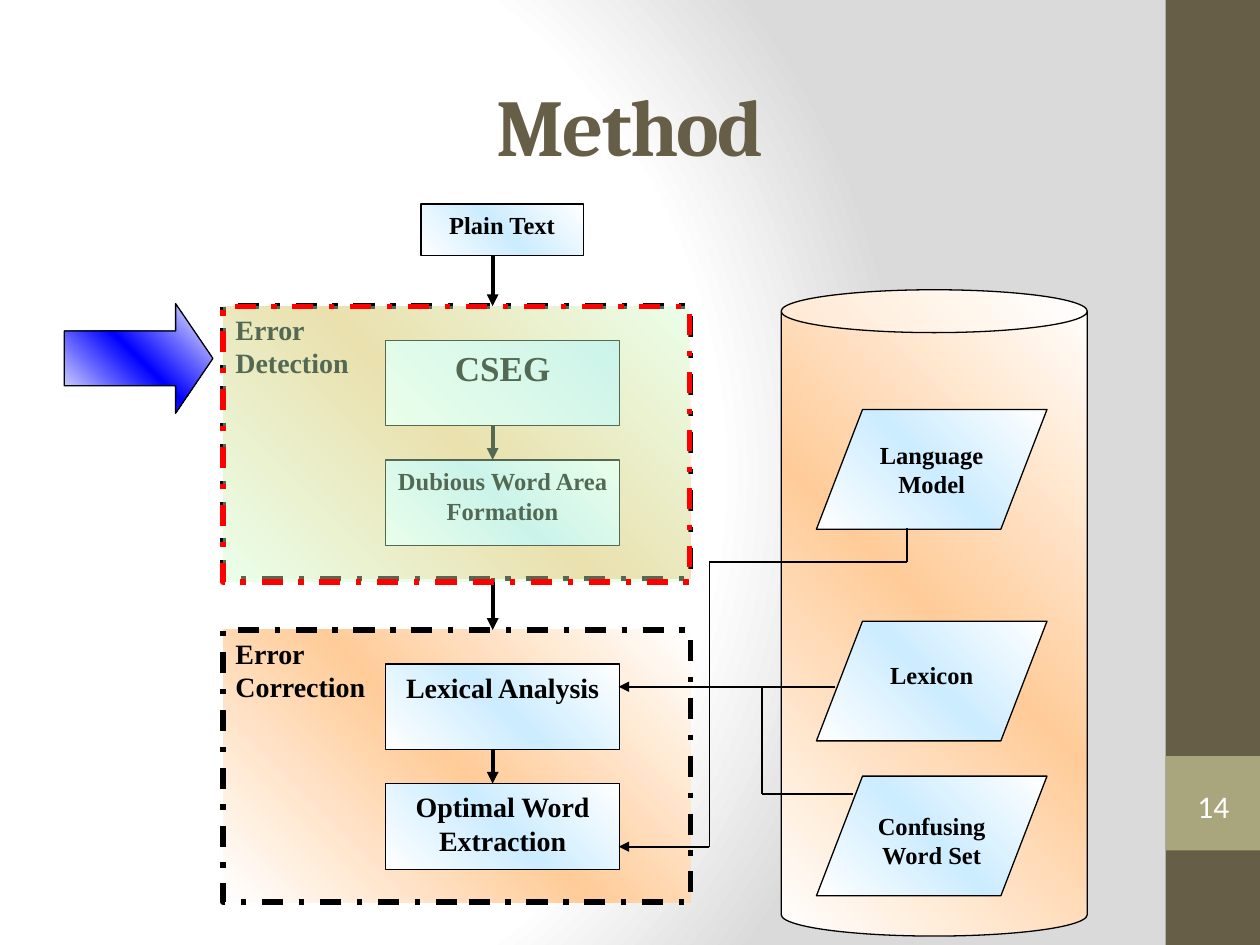
from dataclasses import dataclass
from itertools import pairwise
from lxml.etree import SubElement
from pptx import Presentation
from pptx.dml.color import RGBColor
from pptx.enum.dml import MSO_LINE
from pptx.enum.shapes import MSO_CONNECTOR, MSO_SHAPE
from pptx.enum.text import MSO_ANCHOR, PP_ALIGN
from pptx.oxml.ns import qn
from pptx.slide import Slide
from pptx.util import Inches, Pt

COLORS = {
    "ink": "000000", "white": "FFFFFF", "brown": "675E47", "olive": "A9A57C",
    "gray": "DADADA", "sky": "CCECFF", "peach": "FFCC99", "blue": "0000FF",
    "mint": "CCFFCC", "red": "FF0000",
}
COLUMNS, ROWS = 100, 75
SLIDE_WIDTH, SLIDE_HEIGHT = Inches(10), Inches(7.5)
SKY_BAND = [(0, "white"), (50, "sky"), (100, "white")]
SKY_FADE = [(0, "white"), (100, "sky")]
PEACH_BAND = [(0, "white"), (50, "peach"), (100, "white")]
BLUE_BAND = [(0, "white"), (50, "blue"), (100, "white")]


def rgb(color):
    return RGBColor.from_string(COLORS[color])


def write(frame, text, size=14, font="Times New Roman", color="ink", bold=True,
          align=PP_ALIGN.CENTER, anchor=MSO_ANCHOR.TOP, spacing=0):
    frame.word_wrap = True
    frame.vertical_anchor = anchor
    for number, line in enumerate(text.split("\n")):
        paragraph = frame.add_paragraph() if number else frame.paragraphs[0]
        paragraph.alignment = align
        run = paragraph.add_run()
        run.text = line
        run.font.size, run.font.name, run.font.bold = Pt(size), font, bold
        run.font.color.rgb = rgb(color)
        if spacing:
            run.font._element.set("spc", str(spacing * 100))


def paint_gradient(fill, parent, stops):
    fill.gradient()
    gradient = parent.find(qn("a:gradFill"))
    for child in list(gradient):
        gradient.remove(child)
    stop_list = SubElement(gradient, qn("a:gsLst"))
    for share, color in stops:
        stop = SubElement(stop_list, qn("a:gs"), pos=str(share * 1000))
        SubElement(stop, qn("a:srgbClr"), val=COLORS[color])
    return gradient


@dataclass
class Diagram:
    """Draws flow chart parts on one slide, measured in grid columns and rows."""
    slide: Slide
    thin: float = 0.75
    wire: float = 1
    thick: float = 2.25
    frame: float = 3

    def place(self, *cells):
        sizes = (SLIDE_WIDTH / COLUMNS, SLIDE_HEIGHT / ROWS)
        return [round(cell * sizes[index % 2]) for index, cell in enumerate(cells)]

    def background(self, stops):
        fill = self.slide.background.fill
        fill.solid()
        properties = self.slide._element.cSld.find(qn("p:bg")).find(qn("p:bgPr"))
        gradient = paint_gradient(fill, properties, stops)
        circle = SubElement(gradient, qn("a:path"), path="circle")
        SubElement(circle, qn("a:fillToRect"), l="20000", t="50000", r="100000", b="50000")

    def title(self, text, cells):
        title = self.slide.shapes.title
        title.left, title.top, title.width, title.height = self.place(*cells)
        write(title.text_frame, text, size=46, font="Cambria", color="brown",
              anchor=MSO_ANCHOR.MIDDLE, spacing=-1)

    def block(self, cells, fill=None, kind=MSO_SHAPE.RECTANGLE, line="ink", width=None,
              dashed=False, alpha=None, adjust=(), text="", drop=0, **style):
        block = self.slide.shapes.add_shape(kind, *self.place(*cells))
        block.shadow.inherit = False
        for index, value in enumerate(adjust):
            block.adjustments[index] = value
        if fill is None:
            block.fill.background()
        elif isinstance(fill, str):
            block.fill.solid()
            block.fill.fore_color.rgb = rgb(fill)
        else:
            gradient = paint_gradient(block.fill, block._element.spPr, fill)
            SubElement(gradient, qn("a:lin"), ang=str(315 * 60000), scaled="0")
        if alpha:
            tint = block._element.spPr.find(qn("a:solidFill"))[0]
            SubElement(tint, qn("a:alpha"), val=str(alpha * 1000))
        if line:
            block.line.color.rgb = rgb(line)
            block.line.width = Pt(width or self.thin)
        else:
            block.line.fill.background()
        if dashed:
            block.line.dash_style = MSO_LINE.DASH_DOT
        if text:
            block.text_frame.margin_top = Inches(0.05) + Pt(drop * 1.15)
            write(block.text_frame, text, **style)

    def route(self, *points, width=None, arrow=True):
        steps = list(pairwise(points))
        for number, (start, end) in enumerate(steps, 1):
            leg = self.slide.shapes.add_connector(
                MSO_CONNECTOR.STRAIGHT, *self.place(*start, *end))
            leg.line.color.rgb = rgb("ink")
            leg.line.width = Pt(width or self.wire)
            if arrow and number == len(steps):
                SubElement(leg.line._ln, qn("a:tailEnd"), type="triangle")
            SubElement(leg._element.spPr, qn("a:effectLst"))


def main():
    deck = Presentation()
    deck.slide_width, deck.slide_height = SLIDE_WIDTH, SLIDE_HEIGHT
    diagram = Diagram(deck.slides.add_slide(deck.slide_layouts[5]))
    diagram.background([(0, "white"), (75, "white"), (100, "gray")])
    diagram.block((92.5, 0, 7.5, 75), "brown", line=None)
    diagram.block((92.5, 60, 7.5, 7.5), "olive", line=None)
    diagram.title("Method", (3.3, 3.6, 93.4, 12.5))
    diagram.block((93.3, 61.8, 6, 4.3), kind=MSO_SHAPE.DOUBLE_BRACKET, line=None, text="14",
                  size=18, font="Calibri", color="white", bold=False, anchor=MSO_ANCHOR.MIDDLE)

    diagram.block((33.4, 16.2, 12.9, 4.1), SKY_BAND, text="Plain Text")
    stages = [
        (24.3, "Error\nDetection", [("CSEG", 20, SKY_FADE),
                                    ("Dubious Word Area Formation", 14, SKY_BAND)]),
        (50, "Error\nCorrection", [("Lexical Analysis", 16, SKY_BAND),
                                   ("Optimal Word Extraction", 16, SKY_BAND)]),
    ]
    flow = 39.1
    for top, heading, tasks in stages:
        diagram.block((17.7, top, 37.1, 21.6), PEACH_BAND, width=diagram.frame, dashed=True,
                      text=heading, size=16, align=PP_ALIGN.LEFT)
        for number, (task, size, fill) in enumerate(tasks):
            diagram.block((30.6, top + 2.7 + 9.5 * number, 18.6, 6.8), fill,
                          text=task, size=size)
        diagram.route((flow, top + 9.5), (flow, top + 12.2), width=diagram.thick)
    for start, end in [(20.3, 24.3), (45.9, 50)]:
        diagram.route((flow, start), (flow, end), width=diagram.thick)

    diagram.block((62, 23, 24.3, 51.3), PEACH_BAND, MSO_SHAPE.CAN, adjust=[0.14])
    resources = [("Language Model", 32.5, 12), ("Lexicon", 49.3, 16),
                 ("Confusing Word Set", 61.6, 14)]
    for resource, top, drop in resources:
        diagram.block((64.8, top, 18.3, 9.5), SKY_BAND, MSO_SHAPE.FLOWCHART_DATA,
                      text=resource, drop=drop)
    diagram.route((72, 41.9), (72, 44.6), (56.3, 44.6), (56.3, 67.2), (49.1, 67.2))
    diagram.route((66.3, 54.5), (60.5, 54.5), (49.1, 54.5))
    diagram.route((60.5, 54.5), (60.5, 63), (67.7, 63), arrow=False)

    diagram.block((5.1, 24.1, 11.8, 8.7), BLUE_BAND, MSO_SHAPE.RIGHT_ARROW, adjust=[0.5, 0.34])
    diagram.block((17.7, 24.3, 37, 21.9), "mint", line="red", width=diagram.frame,
                  dashed=True, alpha=41)
    deck.save("out.pptx")


if __name__ == "__main__":
    main()
